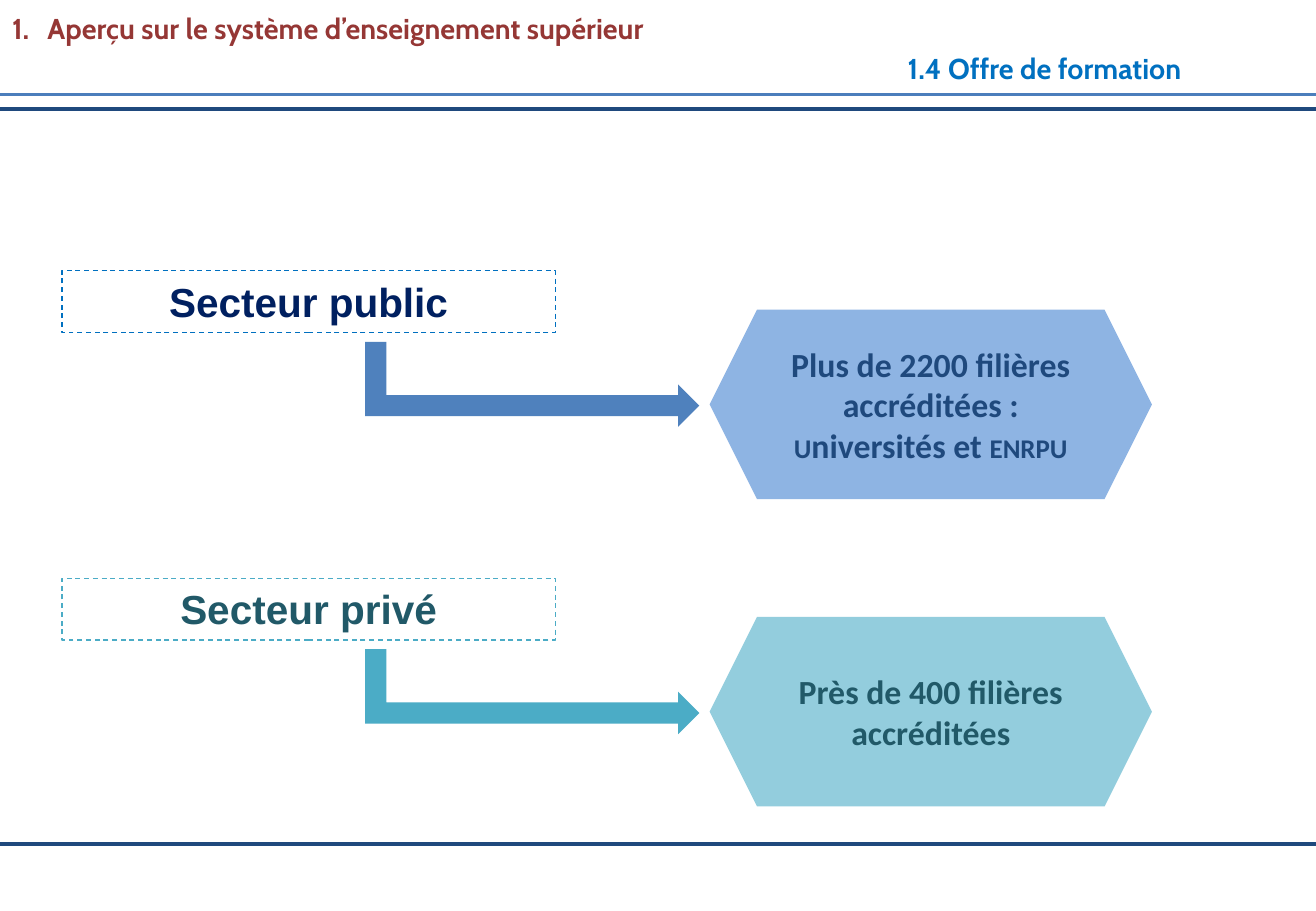
"""Build the slide on the training offer of the public and private sectors."""
from lxml.etree import SubElement as Sub
from pptx import Presentation
from pptx.dml.color import RGBColor
from pptx.enum.dml import MSO_LINE as Dash
from pptx.enum.shapes import MSO_CONNECTOR as Link, MSO_SHAPE as Form
from pptx.enum.text import MSO_ANCHOR as Anchor, MSO_AUTO_SIZE as Fit, PP_ALIGN as Align
from pptx.oxml.ns import qn
from pptx.util import Inches, Pt


def paint(part, tint):
    part.solid()
    part.fore_color.rgb = RGBColor.from_string(tint)


def write(para, text, size, face, tint):
    run = para.add_run()
    run.text = text
    font = run.font
    font.size, font.name, font.bold = Pt(size), face, True
    paint(font.fill, tint)


wide, high = 10.83, 7.5
deck = Presentation()
deck.slide_width, deck.slide_height = Inches(wide), Inches(high)
slide = deck.slides.add_slide(deck.slide_layouts[5])
shapes = slide.shapes

for level, tint, weight in [(6.95, "1F497D", 2.25), (0.9, "1F497D", 2.25), (0.78, "4B7EBC", 2)]:
    rule = shapes.add_connector(Link.STRAIGHT, 0, Inches(level), Inches(wide), Inches(level))
    paint(rule.line.fill, tint)
    rule.line.width = Pt(weight)
    Sub(rule._element.spPr, qn("a:effectLst"))

title = shapes.title
title.left, title.top = 0, Inches(0.04)
title.width, title.height = Inches(wide), Inches(0.72)
frame = title.text_frame
frame.word_wrap, frame.auto_size = True, Fit.NONE
frame.vertical_anchor = Anchor.TOP
head, sub = frame.paragraphs[0], frame.add_paragraph()
head.alignment = sub.alignment = Align.LEFT
write(head, "Aperçu sur le système d’enseignement supérieur", 17, "Cabin", "953735")
write(sub, "1.4 Offre de formation", 17, "Cabin", "0070C0")
sub.space_before = Pt(3.5)
props = head._p.get_or_add_pPr()
props.set("marL", str(Inches(0.29)))
props.set("indent", str(-Inches(0.29)))
Sub(props, qn("a:buFont"), typeface="+mj-lt")
Sub(props, qn("a:buAutoNum"), type="arabicPeriod")
sub._p.get_or_add_pPr().set("marL", str(Inches(7.37)))

sectors = [
    ("Secteur public", "0070C0", "002060", "4F81BD", "8EB4E3", "1F497D",
     [("Plus de 2200 filières accréditées : ", 20), ("U", 16),
      ("niversités et ", 20), ("ENRPU", 16)]),
    ("Secteur privé", "4BACC6", "215968", "4BACC6", "93CDDD", "215968",
     [("Près de 400 filières accréditées", 20)]),
]
first, step = 2.23, 2.53
for row, (name, edge, ink, bend, fill, tone, runs) in enumerate(sectors):
    top = first + row * step
    label = shapes.add_shape(Form.RECTANGLE, Inches(0.51), Inches(top), Inches(4.06), Inches(0.51))
    label.fill.background()
    paint(label.line.fill, edge)
    label.line.width, label.line.dash_style = Pt(0.75), Dash.DASH

    arrow = shapes.add_shape(Form.BENT_UP_ARROW, Inches(4.03), Inches(top - 0.44),
                             Inches(0.7), Inches(2.75))
    arrow.rotation = 90
    paint(arrow.fill, bend)

    offer = shapes.add_shape(Form.HEXAGON, Inches(5.84), Inches(top + 0.32),
                             Inches(3.64), Inches(1.56))
    paint(offer.fill, fill)

    for shape in (arrow, offer):
        shape.line.fill.background()
    for shape in (label, arrow, offer):
        shape.shadow.inherit = False

    for shape, anchor, face, tint, parts in [
        (label, Anchor.TOP, "Arial", ink, [(name, 24)]),
        (offer, Anchor.MIDDLE, "Calibri", tone, runs),
    ]:
        frame = shape.text_frame
        frame.word_wrap, frame.vertical_anchor = True, anchor
        para = frame.paragraphs[0]
        para.alignment = Align.CENTER
        for text, size in parts:
            write(para, text, size, face, tint)

deck.save("out.pptx")
